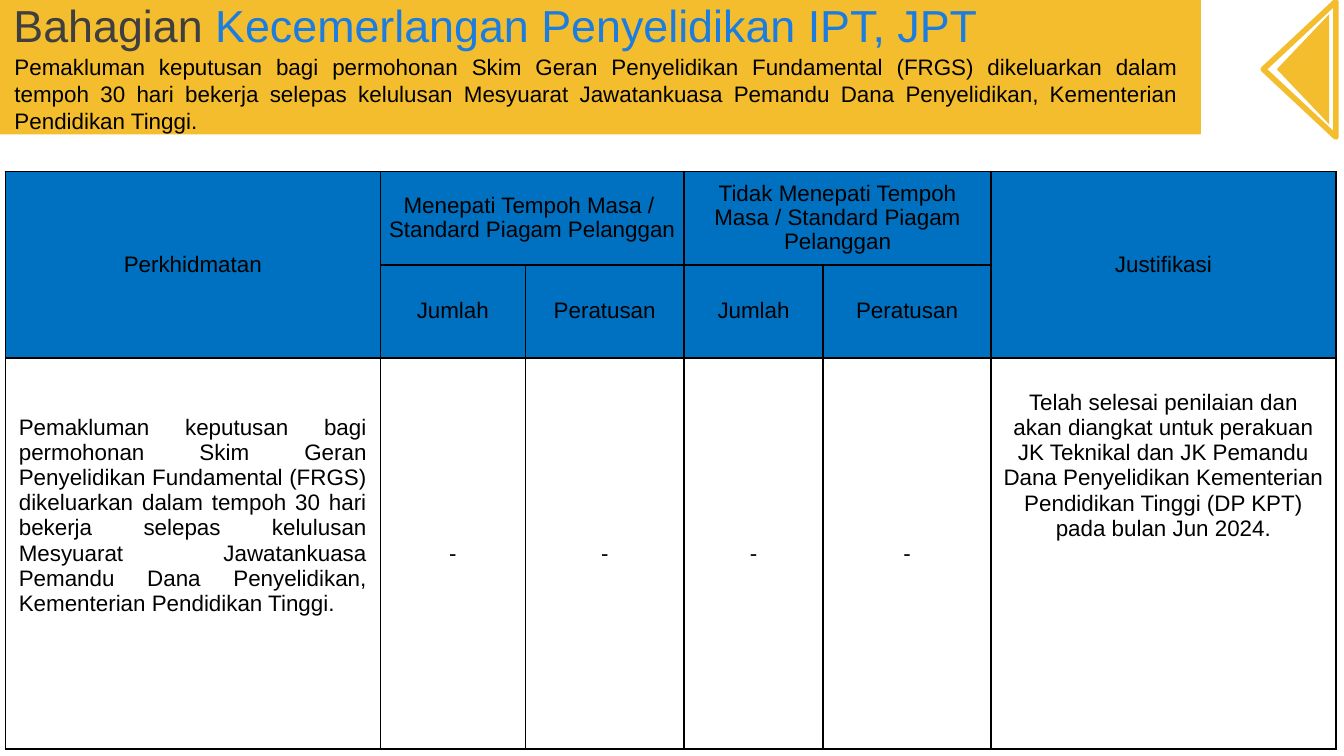
from dataclasses import dataclass

from lxml import etree
from pptx import Presentation
from pptx.dml.color import RGBColor
from pptx.enum.shapes import MSO_SHAPE
from pptx.enum.text import MSO_ANCHOR, MSO_AUTO_SIZE, PP_ALIGN
from pptx.oxml.ns import qn
from pptx.util import Pt

EMU_PER_PX = 4572  # 200 px to the inch
LEFT, CENTER, JUSTIFY = PP_ALIGN.LEFT, PP_ALIGN.CENTER, PP_ALIGN.JUSTIFY
TOP, MIDDLE = MSO_ANCHOR.TOP, MSO_ANCHOR.MIDDLE
RECTANGLE, TRIANGLE = MSO_SHAPE.RECTANGLE, MSO_SHAPE.ISOSCELES_TRIANGLE
TITLE_ONLY = 5


@dataclass(frozen=True)
class Theme:
    font: str = "Arial"
    title_size: int = 24
    body_size: int = 12
    gold: str = "F4BD2D"
    header: str = "0070C0"
    accent: str = "1C7DE1"
    heading: str = "3F3F3F"
    text: str = "000000"


@dataclass(frozen=True)
class CellStyle:
    align: PP_ALIGN = CENTER
    anchor: MSO_ANCHOR = MIDDLE
    margins: tuple = (0, 0, 0, 0)  # left, top, right, bottom
    spacing: float = 1.0
    fill: str = ""


def px(length):
    return length * EMU_PER_PX


def rgb(value):
    return RGBColor.from_string(value)


class SlideBuilder:
    def __init__(self, slide, theme):
        self.slide = slide
        self.theme = theme

    def format_paragraph(self, paragraph, size, align, spacing=1.0):
        paragraph.alignment = align
        paragraph.line_spacing = spacing
        paragraph.space_before = Pt(0)
        paragraph.font.name = self.theme.font
        paragraph.font.size = Pt(size)

    def title(self, box, parts):
        title = self.slide.shapes.title
        title.left, title.top, title.width, title.height = map(px, box)
        frame = title.text_frame
        frame.auto_size = MSO_AUTO_SIZE.NONE
        frame.vertical_anchor = MIDDLE
        heading = frame.paragraphs[0]
        self.format_paragraph(heading, self.theme.title_size, LEFT)
        for words, color in parts:
            run = heading.add_run()
            run.text = words
            run.font.color.rgb = rgb(color)

    def shape(self, kind, box, fill=None, line=None, rotation=0):
        shape = self.slide.shapes.add_shape(kind, *map(px, box))
        shape.shadow.inherit = False
        shape.rotation = rotation
        if fill:
            shape.fill.solid()
            shape.fill.fore_color.rgb = rgb(fill)
        else:
            shape.fill.background()
        if line:
            shape.line.color.rgb = rgb(line)
            shape.line.width = Pt(3)
        else:
            shape.line.fill.background()

    def text(self, box, words, align):
        frame = self.slide.shapes.add_textbox(*map(px, box)).text_frame
        frame.word_wrap = True
        paragraph = frame.paragraphs[0]
        paragraph.text = words
        self.format_paragraph(paragraph, self.theme.body_size, align)
        paragraph.font.color.rgb = rgb(self.theme.text)

    def table(self, box, columns, rows):
        frame = self.slide.shapes.add_table(len(rows), len(columns), *map(px, box))
        table = frame.table
        table.first_row = table.horz_banding = False
        for column, width in zip(table.columns, columns):
            column.width = px(width)
        for row, height in zip(table.rows, rows):
            row.height = px(height)
        for cell in table.iter_cells():
            self.borders(cell)
            cell.fill.background()
        return table

    def borders(self, cell):
        properties = cell._tc.get_or_add_tcPr()
        for side in ("a:lnL", "a:lnR", "a:lnT", "a:lnB"):
            line = etree.SubElement(properties, qn(side), w=str(Pt(1)))
            fill = etree.SubElement(line, qn("a:solidFill"))
            etree.SubElement(fill, qn("a:srgbClr"), val=self.theme.text)

    def cell(self, cell, words, style):
        """Fill a cell, with one paragraph to each line of words."""
        cell.vertical_anchor = style.anchor
        (cell.margin_left, cell.margin_top,
         cell.margin_right, cell.margin_bottom) = map(px, style.margins)
        if style.fill:
            cell.fill.solid()
            cell.fill.fore_color.rgb = rgb(style.fill)
        cell.text_frame.text = words
        for paragraph in cell.text_frame.paragraphs:
            self.format_paragraph(paragraph, self.theme.body_size, style.align, style.spacing)
            paragraph.font.color.rgb = rgb(self.theme.text)


SERVICE = (
    "Pemakluman keputusan bagi permohonan Skim Geran Penyelidikan Fundamental (FRGS) "
    "dikeluarkan dalam tempoh 30 hari bekerja selepas kelulusan Mesyuarat Jawatankuasa "
    "Pemandu Dana Penyelidikan, Kementerian Pendidikan Tinggi."
)
JUSTIFICATION = "\n".join((
    "Telah selesai penilaian dan",
    "akan diangkat untuk perakuan",
    "JK Teknikal dan JK Pemandu",
    "Dana Penyelidikan Kementerian",
    "Pendidikan Tinggi (DP KPT)",
    "pada bulan Jun 2024.",
))
# row, column, last row, last column, words
HEADERS = (
    (0, 0, 1, 0, "Perkhidmatan"),
    (0, 1, 0, 2, "Menepati Tempoh Masa / \nStandard Piagam Pelanggan"),
    (0, 3, 0, 4, "Tidak Menepati Tempoh Masa / Standard Piagam Pelanggan"),
    (0, 5, 1, 5, "Justifikasi"),
)


def main():
    theme = Theme()
    deck = Presentation()
    deck.slide_width, deck.slide_height = px(2000), px(1125)
    builder = SlideBuilder(deck.slides.add_slide(deck.slide_layouts[TITLE_ONLY]), theme)

    builder.shape(RECTANGLE, (0, 0, 1787, 200), fill=theme.gold)
    builder.text((2, 70, 1772, 140), SERVICE, JUSTIFY)
    # The title placeholder comes first in the tree; bring it above the band.
    tree = builder.slide.shapes._spTree
    tree.append(builder.slide.shapes.title._element)
    builder.title((0, -22, 1536, 118), (
        ("Bahagian ", theme.heading),
        ("Kecemerlangan Penyelidikan IPT, JPT", theme.accent),
    ))
    builder.shape(TRIANGLE, (1857, 64, 164, 78), fill=theme.gold, rotation=270)
    builder.shape(TRIANGLE, (1833, 49, 202, 108), line=theme.gold, rotation=270)

    table = builder.table((8, 255, 1980, 860), (558, 216, 236, 207, 250, 513), (139, 139, 582))
    group = CellStyle(spacing=0.96, fill=theme.header)
    measure = CellStyle(spacing=0.88, fill=theme.header)
    for row, column, last_row, last_column, words in HEADERS:
        table.cell(row, column).merge(table.cell(last_row, last_column))
        builder.cell(table.cell(row, column), words, group)
    for column, words in enumerate(("Jumlah", "Peratusan") * 2, start=1):
        builder.cell(table.cell(1, column), words, measure)
        builder.cell(table.cell(2, column), "-", CellStyle(margins=(14, 10, 14, 10)))
    builder.cell(table.cell(2, 0), SERVICE, CellStyle(JUSTIFY, TOP, (20, 85, 20, 10)))
    builder.cell(table.cell(2, 5), JUSTIFICATION, CellStyle(CENTER, TOP, (14, 48, 14, 10)))

    deck.save("out.pptx")


if __name__ == "__main__":
    main()
